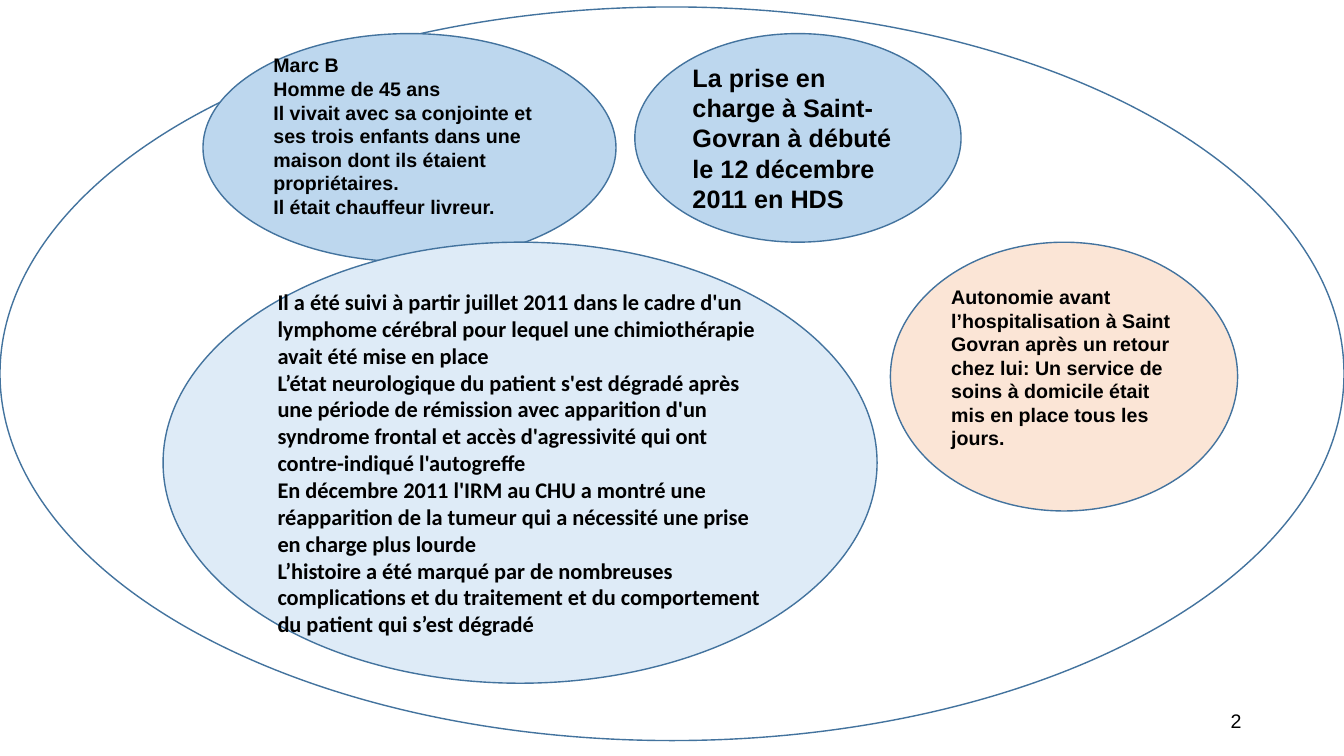
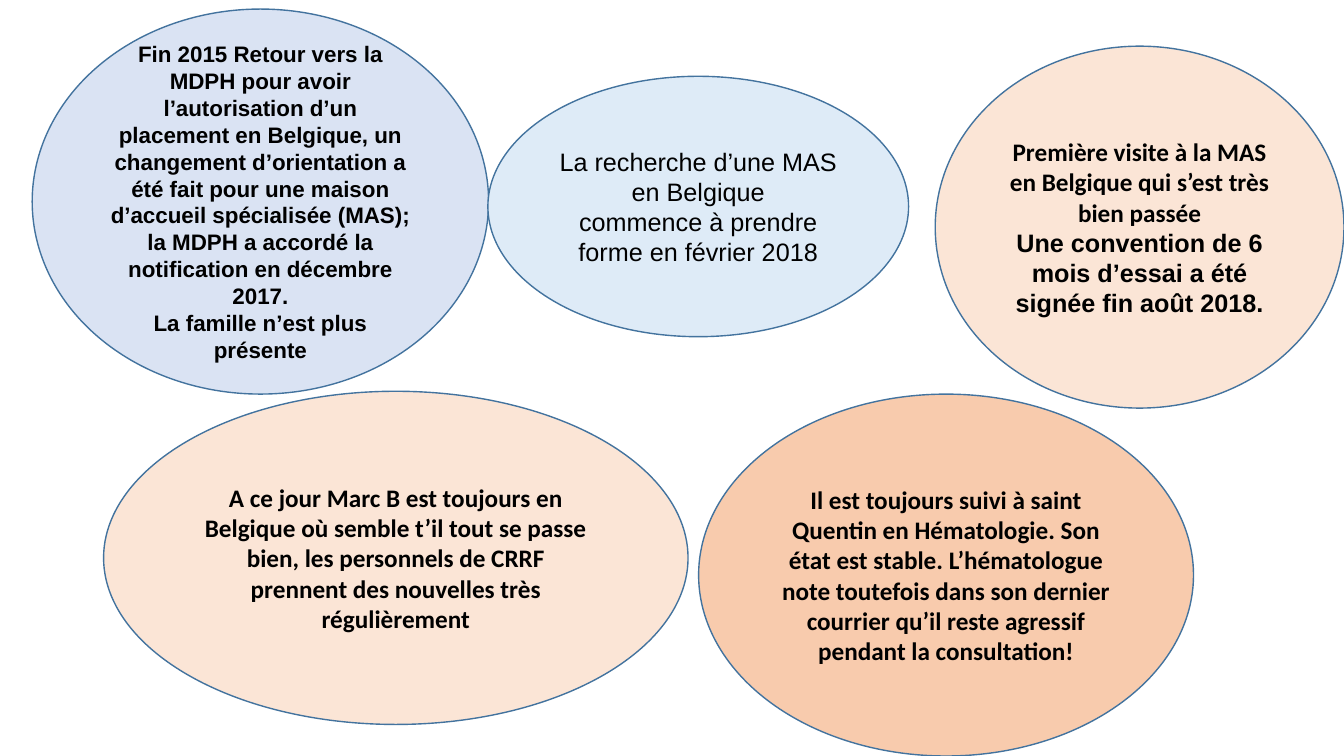
from dataclasses import dataclass

from pptx import Presentation
from pptx.dml.color import RGBColor as Color
from pptx.enum.shapes import MSO_SHAPE as Shape
from pptx.enum.text import MSO_ANCHOR as Anchor, PP_ALIGN as Align
from pptx.util import Pt


@dataclass(frozen=True)
class Theme:
    """Colours, fonts and type sizes shared by the slides."""
    line: str = "43739E"
    ink: str = "000000"
    sky: str = "BDD7EE"
    pale_sky: str = "DEEBF7"
    lavender: str = "DAE3F3"
    peach: str = "FBE5D6"
    apricot: str = "F8CBAD"
    sans: str = "Arial"
    body: str = "Calibri"
    small: int = 14
    medium: int = 16
    large: int = 18


THEME = Theme()


def write(frame, lines, size, fonts, align, bold=True):
    """Fill a text frame with one paragraph per line, one font each."""
    frame.word_wrap = True
    frame.vertical_anchor = Anchor.MIDDLE
    frame.text = "\n".join(lines)
    for para, font_name in zip(frame.paragraphs, fonts):
        para.alignment = align
        for span in para.runs:
            span.font.name = font_name
            span.font.size = Pt(size)
            span.font.bold = bold
            span.font.color.rgb = Color.from_string(THEME.ink)


def add_oval(page, box, fill=None):
    """Draw an outlined oval in the box and return it."""
    oval = page.shapes.add_shape(Shape.OVAL, *map(Pt, box))
    oval.shadow.inherit = False
    oval.line.color.rgb = Color.from_string(THEME.line)
    oval.line.width = Pt(1)
    if fill:
        oval.fill.solid()
        oval.fill.fore_color.rgb = Color.from_string(fill)
    else:
        oval.fill.background()
    return oval


def add_bubble(page, box, fill, lines, size, fonts=(THEME.sans,),
               align=Align.CENTER, bold=True, lift=0):
    """Draw a filled oval with text, raised by half of lift."""
    frame = add_oval(page, box, fill).text_frame
    frame.margin_bottom = Pt(3.6 + lift)
    if len(fonts) == 1:
        fonts = fonts * len(lines)
    write(frame, lines, size, fonts, align, bold)


def add_page_number(page, box, number):
    """Place the page number at the right of the box."""
    frame = page.shapes.add_textbox(*map(Pt, box)).text_frame
    write(frame, [str(number)], THEME.small, [THEME.sans], Align.RIGHT, False)


def build_history(page):
    """Present the patient and the history of the illness."""
    add_oval(page, (0, 5, 960, 524))
    add_bubble(page, (636, 173, 248, 192), THEME.peach, [
        "Autonomie avant l’hospitalisation à Saint Govran après un retour "
        "chez lui: Un service de soins à domicile était mis en place tous "
        "les jours.",
    ], THEME.small, align=Align.LEFT, lift=13)
    add_bubble(page, (145, 24, 295, 163), THEME.sky, [
        "Marc B",
        "Homme de 45 ans",
        "Il vivait avec sa conjointe et ses trois enfants dans une maison "
        "dont ils étaient propriétaires.",
        "Il était chauffeur livreur.",
    ], THEME.small, align=Align.LEFT, lift=17)
    add_bubble(page, (453.5, 24, 233, 149), THEME.sky, [
        "La prise en charge à Saint-Govran à débuté le 12 décembre 2011 "
        "en HDS",
    ], THEME.large, align=Align.LEFT)
    add_bubble(page, (116.5, 173, 510, 315), THEME.pale_sky, [
        "Il a été suivi à partir juillet 2011 dans le cadre d'un lymphome "
        "cérébral pour lequel une chimiothérapie avait été mise en place",
        "L’état neurologique du patient s'est dégradé après une période de "
        "rémission avec apparition d'un syndrome frontal et accès "
        "d'agressivité qui ont contre-indiqué l'autogreffe",
        "En décembre 2011 l'IRM au CHU a montré une réapparition de la "
        "tumeur qui a nécessité une prise en charge plus lourde",
        "L’histoire a été marqué par de nombreuses complications et du "
        "traitement et du comportement du patient qui s’est dégradé",
    ], THEME.medium, (THEME.body,), Align.LEFT)
    add_page_number(page, (678, 500.5, 216, 29), 2)


def build_placement(page):
    """Tell the search for a placement and the current situation."""
    add_bubble(page, (23, 6.5, 326, 275), THEME.lavender, [
        "Fin 2015 Retour vers la MDPH pour avoir l’autorisation d’un "
        "placement en Belgique, un changement d’orientation a été fait pour "
        "une maison d’accueil spécialisée (MAS); la MDPH a accordé la "
        "notification en décembre 2017.",
        "La famille n’est plus présente",
    ], THEME.medium)
    add_bubble(page, (348.5, 54.5, 300.5, 186), THEME.pale_sky, [
        "La recherche d’une MAS en Belgique",
        "commence à prendre forme en février 2018",
    ], THEME.large, bold=False)
    add_bubble(page, (668, 33, 292, 258.5), THEME.peach, [
        "Première visite à la MAS en Belgique qui s’est très bien passée",
        "Une convention de 6 mois d’essai a été signée fin août 2018.",
    ], THEME.large, (THEME.body, THEME.sans))
    add_bubble(page, (74, 279.5, 417.5, 238), THEME.peach, [
        "A ce jour Marc B est toujours en Belgique où semble t’il tout se "
        "passe bien, les personnels de CRRF prennent des nouvelles très "
        "régulièrement",
    ], THEME.large, (THEME.body,))
    add_bubble(page, (499, 281.5, 353.5, 258.5), THEME.apricot, [
        "Il est toujours suivi à saint Quentin en Hématologie. Son état est "
        "stable. L’hématologue note toutefois dans son dernier courrier "
        "qu’il reste agressif pendant la consultation!",
    ], THEME.large, (THEME.body,))


def main():
    """Build and save the deck."""
    deck = Presentation()
    deck.slide_width, deck.slide_height = Pt(960), Pt(540)
    blank = deck.slide_layouts.get_by_name("Blank")
    for build in (build_history, build_placement):
        build(deck.slides.add_slide(blank))
    deck.save("out.pptx")


if __name__ == "__main__":
    main()
